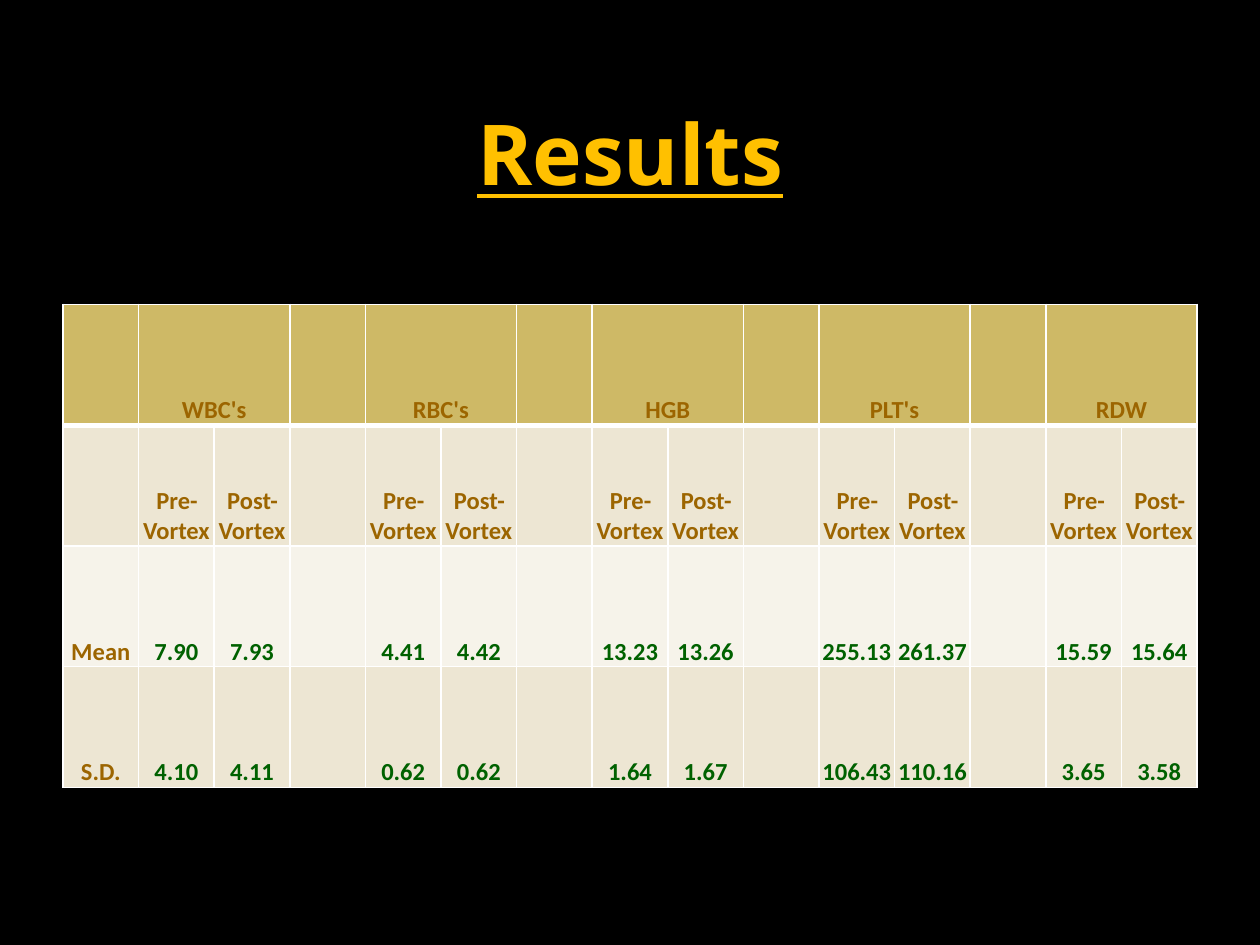
from dataclasses import dataclass

from lxml import etree
from pptx import Presentation
from pptx import util as u
from pptx.dml import color
from pptx.enum import text
from pptx.oxml import ns

GRID_COLUMNS, GRID_ROWS = 20, 90
BLANK_LAYOUT = 6
STATISTICS = {
    "WBC's": (("7.90", "7.93"), ("4.10", "4.11")),
    "RBC's": (("4.41", "4.42"), ("0.62", "0.62")),
    "HGB": (("13.23", "13.26"), ("1.64", "1.67")),
    "PLT's": (("255.13", "261.37"), ("106.43", "110.16")),
    "RDW": (("15.59", "15.64"), ("3.65", "3.58")),
}


@dataclass(frozen=True)
class Theme:
    """Hold the colours, fonts and sizes of the slide."""
    background: str = "000000"
    title: str = "FFC000"
    label: str = "9C6500"
    value: str = "006100"
    border: str = "FFFFFF"
    row_fills: tuple = ("CEB966", "EDE6D3", "F6F3EA", "EDE6D3")
    title_font: str = "Noto Sans"
    table_font: str = "Calibri"
    title_size: int = 48
    table_size: int = 14
    thin_line: int = 1
    header_line: int = 3


THEME = Theme()


def rgb(value):
    """Turn a hexadecimal string into a colour."""
    return color.RGBColor.from_string(value)


def grid_box(presentation, column, row, columns, rows):
    """Return left, top, width and height of a block of grid cells."""
    column_width = presentation.slide_width / GRID_COLUMNS
    row_height = presentation.slide_height / GRID_ROWS
    return (round(column * column_width), round(row * row_height),
            round(columns * column_width), round(rows * row_height))


def write_text(text_frame, wording, font_name, size, font_color):
    """Write one centred bold paragraph and return its font."""
    text_frame.text = wording
    paragraph = text_frame.paragraphs[0]
    paragraph.alignment = text.PP_ALIGN.CENTER
    font = paragraph.runs[0].font
    font.name, font.size, font.bold = font_name, u.Pt(size), True
    font.color.rgb = rgb(font_color)
    return font


def add_title(slide, box, wording):
    """Place the underlined heading in its box."""
    text_frame = slide.shapes.add_textbox(*box).text_frame
    text_frame.word_wrap = True
    text_frame.vertical_anchor = text.MSO_ANCHOR.MIDDLE
    font = write_text(text_frame, wording, THEME.title_font,
                      THEME.title_size, THEME.title)
    font.underline = True


def set_borders(cell, top, bottom):
    """Draw the four borders of a cell, with the given top and bottom widths."""
    properties = cell._tc.get_or_add_tcPr()
    widths = {"L": THEME.thin_line, "R": THEME.thin_line, "T": top, "B": bottom}
    for position, (side, width) in enumerate(widths.items()):
        line = etree.Element(ns.qn(f"a:ln{side}"), w=str(u.Pt(width)))
        fill = etree.SubElement(line, ns.qn("a:solidFill"))
        etree.SubElement(fill, ns.qn("a:srgbClr"), val=THEME.border)
        properties.insert(position, line)


def format_cell(cell, wording, row, column):
    """Fill a cell, draw its borders and write its wording."""
    cell.fill.solid()
    cell.fill.fore_color.rgb = rgb(THEME.row_fills[row])
    set_borders(cell,
                THEME.header_line if row == 1 else THEME.thin_line,
                THEME.header_line if row == 0 else THEME.thin_line)
    cell.margin_left = cell.margin_right = cell.margin_top = u.Inches(0.01)
    cell.margin_bottom = 0
    cell.vertical_anchor = text.MSO_ANCHOR.BOTTOM
    if wording:
        font_color = THEME.value if row > 1 and column > 0 else THEME.label
        write_text(cell.text_frame, wording, THEME.table_font,
                   THEME.table_size, font_color)


def table_rows():
    """Lay out the statistics as rows, with a spacer before each group."""
    rows = [[], [], [], []]
    for index, (name, (means, deviations)) in enumerate(STATISTICS.items()):
        labels = ("", "", "Mean", "S.D.") if index == 0 else ("",) * 4
        groups = ((name, ""), ("Pre-Vortex", "Post-Vortex"), means, deviations)
        for row, label, pair in zip(rows, labels, groups):
            row.extend((label, *pair))
    return rows


def add_statistics(slide, box):
    """Place the table of blood counts in its box."""
    rows = table_rows()
    row_count, column_count = len(rows), len(rows[0])
    table = slide.shapes.add_table(row_count, column_count, *box).table
    for column in table.columns:
        column.width = round(box[2] / column_count)
    for row in table.rows:
        row.height = round(box[3] / row_count)
    for row_index, row in enumerate(rows):
        for column_index, wording in enumerate(row):
            format_cell(table.cell(row_index, column_index), wording,
                        row_index, column_index)
    for start in range(1, column_count, 3):
        table.cell(0, start).merge(table.cell(0, start + 1))


def main():
    """Build the results slide and save it."""
    presentation = Presentation()
    presentation.slide_width, presentation.slide_height = u.Inches(10), u.Inches(7.5)
    slide = presentation.slides.add_slide(presentation.slide_layouts[BLANK_LAYOUT])
    slide.background.fill.solid()
    slide.background.fill.fore_color.rgb = rgb(THEME.background)
    add_title(slide, grid_box(presentation, 1, 7, 18, 15), "Results")
    add_statistics(slide, grid_box(presentation, 1, 29, 18, 46))
    presentation.save("out.pptx")


if __name__ == "__main__":
    main()
